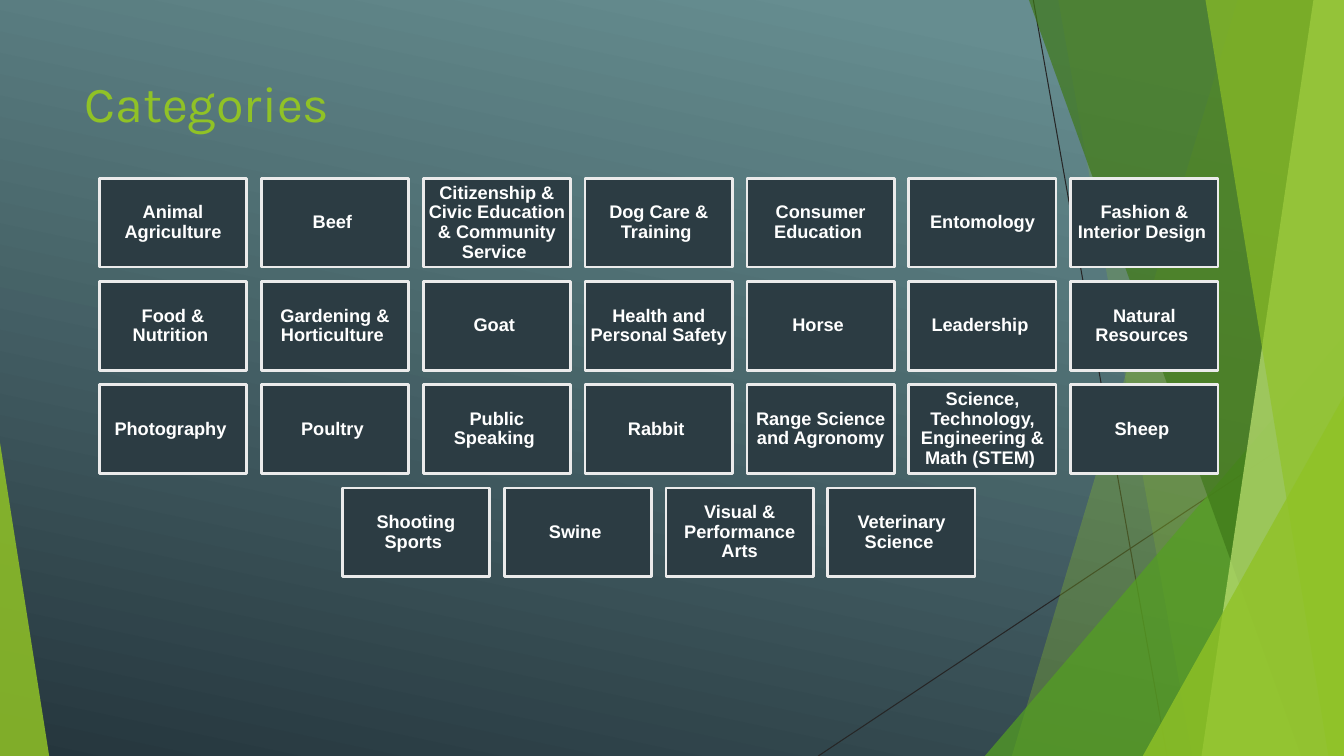
from lxml import etree
from pptx import Presentation
from pptx.dml.color import RGBColor
from pptx.enum.shapes import MSO_CONNECTOR, MSO_SHAPE
from pptx.enum.text import MSO_ANCHOR, PP_ALIGN
from pptx.oxml.ns import qn
from pptx.util import Cm, Pt

RECTANGLE, TRIANGLE = MSO_SHAPE.RECTANGLE, MSO_SHAPE.ISOSCELES_TRIANGLE
STRAIGHT = MSO_CONNECTOR.STRAIGHT
CENTER, MIDDLE, TOP = PP_ALIGN.CENTER, MSO_ANCHOR.MIDDLE, MSO_ANCHOR.TOP

# Content
TITLE = "Categories"
CATEGORY_ROWS = [
    ["Animal Agriculture", "Beef ",
     "Citizenship & Civic Education & Community Service ",
     "Dog Care & Training ", "Consumer Education ", "Entomology",
     "Fashion & Interior Design "],
    ["Food & Nutrition ", "Gardening & Horticulture ", "Goat ",
     "Health and Personal Safety ", "Horse ", "Leadership ",
     "Natural Resources "],
    ["Photography ", "Poultry ", "Public Speaking ", "Rabbit ",
     "Range Science and Agronomy",
     "Science, Technology, Engineering & Math (STEM) ", "Sheep "],
    ["Shooting Sports ", "Swine ", "Visual & Performance Arts",
     "Veterinary Science "],
]

COLORS = {
    "sky": "668D90", "night": "25363D", "thread": "262626",
    "lime": "90C226", "leaf": "54A021", "forest": "3F7819", "pale": "C0E474",
    "tile": "2C3C43", "border": "EBEBEB", "white": "FFFFFF",
}

# Layout in centimetres
PAGE_W, PAGE_H = 33.87, 19.05
TILE_W, TILE_H, GAP = 3.71, 2.23, 0.37
GRID_CENTER, GRID_TOP = 16.6, 4.5

# Thin lines: x1, y1, x2, y2
THREADS = [(26.04, 0, 29.41, PAGE_H), (PAGE_W, 10.24, 20.62, PAGE_H)]

# Facets from back to front, all resting on the bottom edge
# panel: x at top, x at bottom; reaches the right edge
# triangle: left, top, width, apex position
FACETS = [
    ("panel", (31.19, 25.5), "lime", 30),
    ("panel", (26.67, 30.05), "lime", 20),
    ("triangle", (24.82, 8.46, 9.05, 1), "leaf", 72),
    ("panel", (25.93, 32.79), "forest", 70),
    ("panel", (33.1, 30.28), "pale", 70),
    ("panel", (30.38, 33.48), "lime", 65),
    ("triangle", (28.8, 9.98, 5.07, 1), "lime", 80),
    ("triangle", (0, 11.15, 1.24, 0), "lime", 85),
]


def rgb(name):
    return RGBColor.from_string(COLORS[name])


def paint(shape, color, opacity=100):
    shape.shadow.inherit = False
    shape.fill.solid()
    shape.fill.fore_color.rgb = rgb(color)
    if opacity < 100:
        tone = shape.fill._xPr.find(qn("a:solidFill"))[0]
        etree.SubElement(tone, qn("a:alpha"), val=str(opacity * 1000))


def write(shape, text, font, size, color, bold=False):
    para = shape.text_frame.paragraphs[0]
    span = para.add_run()
    span.text = text
    span.font.name, span.font.size, span.font.bold = font, Pt(size), bold
    span.font.color.rgb = rgb(color)
    return para


def add_thread(shapes, ends):
    thread = shapes.add_connector(STRAIGHT, *[Cm(end) for end in ends])
    thread.line.color.rgb = rgb("thread")
    thread.line.width = Pt(0.75)
    etree.SubElement(thread._element.spPr, qn("a:effectLst"))


def add_facet(shapes, kind, geometry, color, opacity):
    if kind == "panel":
        top_x, bottom_x = geometry
        corners = [(PAGE_W, 0), (PAGE_W, PAGE_H), (bottom_x, PAGE_H)]
        builder = shapes.build_freeform(Cm(top_x), 0)
        builder.add_line_segments([(Cm(x), Cm(y)) for x, y in corners])
        facet = builder.convert_to_shape()
    else:
        left, top, width, apex = geometry
        facet = shapes.add_shape(TRIANGLE, Cm(left), Cm(top),
                                 Cm(width), Cm(PAGE_H - top))
        facet.adjustments[0] = apex
    paint(facet, color, opacity)
    facet.line.fill.background()


def add_tile(shapes, left, top, category):
    tile = shapes.add_shape(RECTANGLE, Cm(left), Cm(top),
                            Cm(TILE_W), Cm(TILE_H))
    paint(tile, "tile")
    tile.line.color.rgb = rgb("border")
    tile.line.width = Pt(2)
    frame = tile.text_frame
    frame.word_wrap = True
    frame.vertical_anchor = MIDDLE
    frame.margin_left = frame.margin_right = Cm(0.13)
    frame.margin_top = frame.margin_bottom = Cm(0.13)
    para = write(tile, category, "Arial", 13, "white", True)
    para.alignment = CENTER
    para.line_spacing = 0.9
    para.space_after = Pt(4.5)


def main():
    deck = Presentation()
    deck.slide_width, deck.slide_height = Cm(PAGE_W), Cm(PAGE_H)
    page = deck.slides.add_slide(deck.slide_layouts[6])
    shapes = page.shapes

    # Background
    backdrop = page.background.fill
    backdrop.gradient()
    backdrop.gradient_angle = 258
    stops = [("sky", 0.1), ("night", 1)]
    for stop, (color, position) in zip(backdrop.gradient_stops, stops):
        stop.color.rgb = rgb(color)
        stop.position = position

    # Decoration
    for ends in THREADS:
        add_thread(shapes, ends)
    for facet in FACETS:
        add_facet(shapes, *facet)

    # Title
    title = shapes.add_textbox(Cm(1.88), Cm(1.7), Cm(23.88), Cm(3.66))
    title.text_frame.word_wrap = True
    title.text_frame.vertical_anchor = TOP
    write(title, TITLE, "Karla", 36, "lime")

    # Category tiles, each row centred
    for row, categories in enumerate(CATEGORY_ROWS):
        row_width = len(categories) * (TILE_W + GAP) - GAP
        row_left = GRID_CENTER - row_width / 2
        top = GRID_TOP + row * (TILE_H + GAP)
        for column, category in enumerate(categories):
            add_tile(shapes, row_left + column * (TILE_W + GAP), top, category)

    deck.save("out.pptx")


if __name__ == "__main__":
    main()
